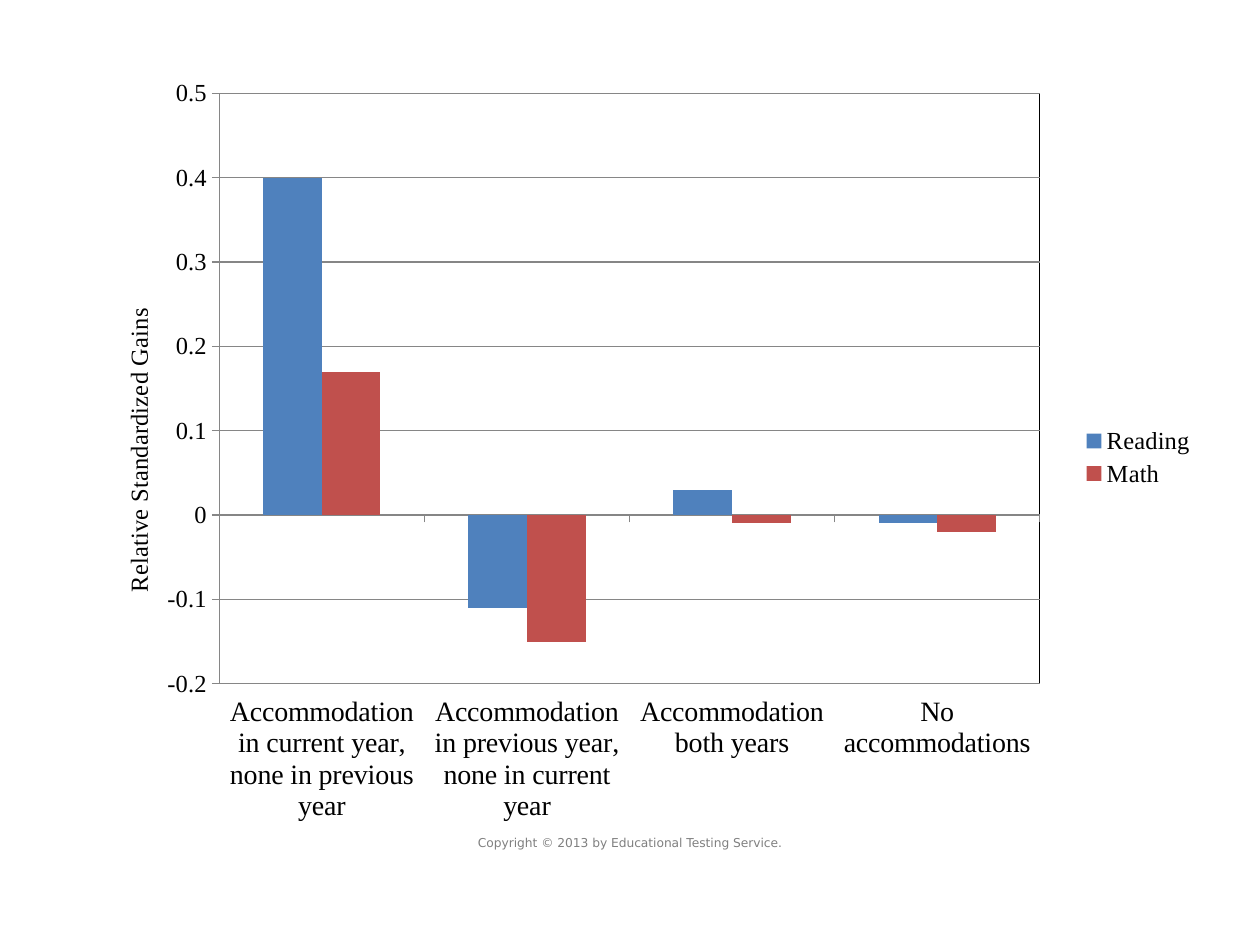
import pptx
import pptx.util
import pptx.chart.data
import pptx.dml.color
import pptx.enum.chart
import pptx.enum.text
import pptx.oxml
import pptx.oxml.ns

Inches = pptx.util.Inches
Pt = pptx.util.Pt
qn = pptx.oxml.ns.qn
enum = pptx.enum.chart
HEX = {"text": "000000", "note": "808080", "grid": "868686",
       "Reading": "4F81BD", "Math": "C0504D"}
GAINS = {"Reading": (0.4, -0.11, 0.03, -0.01),
         "Math": (0.17, -0.15, -0.01, -0.02)}
CATS = ("Accommodation in current year, none in previous year",
        "Accommodation in previous year, none in current year",
        "Accommodation both years", "No accommodations")


def assign(item, **vals):
    """Set each named value on the item."""
    for name, val in vals.items():
        setattr(item, name, val)


def color(name):
    """Return the named colour."""
    return pptx.dml.color.RGBColor.from_string(HEX[name])


def style(font, size, face="Times New Roman", tint="text"):
    """Set size, face and colour of a font."""
    assign(font, size=Pt(size), name=face, bold=False)
    font.color.rgb = color(tint)


def layout(node, after=None, **vals):
    """Give a chart part a manual layout, as fractions of the chart."""
    for old in node.findall(qn("c:layout")):
        node.remove(old)
    inner = '<c:layoutTarget val="inner"/>' if "w" in vals else ""
    modes = "".join(f'<c:{key}Mode val="edge"/>' for key in "xy")
    sizes = "".join(f'<c:{key} val="{val}"/>' for key, val in vals.items())
    part = pptx.oxml.parse_xml(
        f'<c:layout {pptx.oxml.ns.nsdecls("c")}><c:manualLayout>'
        f'{inner}{modes}{sizes}</c:manualLayout></c:layout>')
    if after is None:
        node.insert(0, part)
    else:
        after.addnext(part)


def frame(plot):
    """Draw a thin border around the plot area."""
    plot.append(pptx.oxml.parse_xml(
        f'<c:spPr {pptx.oxml.ns.nsdecls("c", "a")}><a:noFill/>'
        f'<a:ln w="9525"><a:solidFill><a:srgbClr val="{HEX["text"]}"/>'
        '</a:solidFill></a:ln></c:spPr>'))


def axes(chart):
    """Format both axes and the value title."""
    cat, val = chart.category_axis, chart.value_axis
    for axis, size in ((cat, 16), (val, 14)):
        style(axis.tick_labels.font, size)
        assign(axis, major_tick_mark=enum.XL_TICK_MARK.OUTSIDE,
               minor_tick_mark=enum.XL_TICK_MARK.NONE)
        assign(axis.format.line, width=Pt(0.75))
        axis.format.line.color.rgb = color("grid")
    cat.tick_label_position = enum.XL_TICK_LABEL_POSITION.LOW
    assign(val, minimum_scale=-0.2, maximum_scale=0.5, major_unit=0.1,
           has_major_gridlines=True)
    line = val.major_gridlines.format.line
    line.width = Pt(0.75)
    line.color.rgb = color("grid")
    title = val.axis_title
    title.text_frame.text = "Relative Standardized Gains"
    style(title.text_frame.paragraphs[0].runs[0].font, 14)
    node = title._element
    node.find(".//" + qn("a:bodyPr")).set("rot", "-5400000")
    layout(node, node.find(qn("c:tx")), x=0.03, y=0.31)


def graph(slide, left, top, width, height):
    """Place the chart of gains in its box."""
    data = pptx.chart.data.CategoryChartData()
    data.categories = CATS
    for name, vals in GAINS.items():
        data.add_series(name, vals)
    chart = slide.shapes.add_chart(
        enum.XL_CHART_TYPE.COLUMN_CLUSTERED, left, top, width, height,
        data).chart
    style(chart.font, 14)
    assign(chart, has_title=False, has_legend=True)
    assign(chart.legend, position=enum.XL_LEGEND_POSITION.RIGHT,
           include_in_layout=False)
    style(chart.legend.font, 14)
    assign(chart.plots[0], gap_width=150, overlap=0, vary_by_categories=False)
    for bars in chart.plots[0].series:
        bars.invert_if_negative = False
        bars.format.fill.solid()
        bars.format.fill.fore_color.rgb = color(bars.name)
    axes(chart)
    plot = chart._chartSpace.find(".//" + qn("c:plotArea"))
    layout(plot, x=0.12, y=0.05, w=0.73, h=0.73)
    frame(plot)


def footer(slide, left, top, width, height):
    """Place the centred copyright line in its box."""
    text = slide.shapes.add_textbox(left, top, width, height).text_frame
    text.word_wrap = True
    para = text.paragraphs[0]
    para.text = "Copyright © 2013 by Educational Testing Service."
    para.alignment = pptx.enum.text.PP_ALIGN.CENTER
    style(para.runs[0].font, 7, "DejaVu Sans", "note")


def main():
    """Build and save the slide."""
    deck = pptx.Presentation()
    assign(deck, slide_width=Inches(10), slide_height=Inches(7.5))
    slide = deck.slides.add_slide(deck.slide_layouts[6])
    footer(slide, Inches(0.5), Inches(6.58), Inches(9), Inches(0.22))
    graph(slide, Inches(0.67), Inches(0.42), Inches(8.92), Inches(6.42))
    deck.save("out.pptx")


if __name__ == "__main__":
    main()
